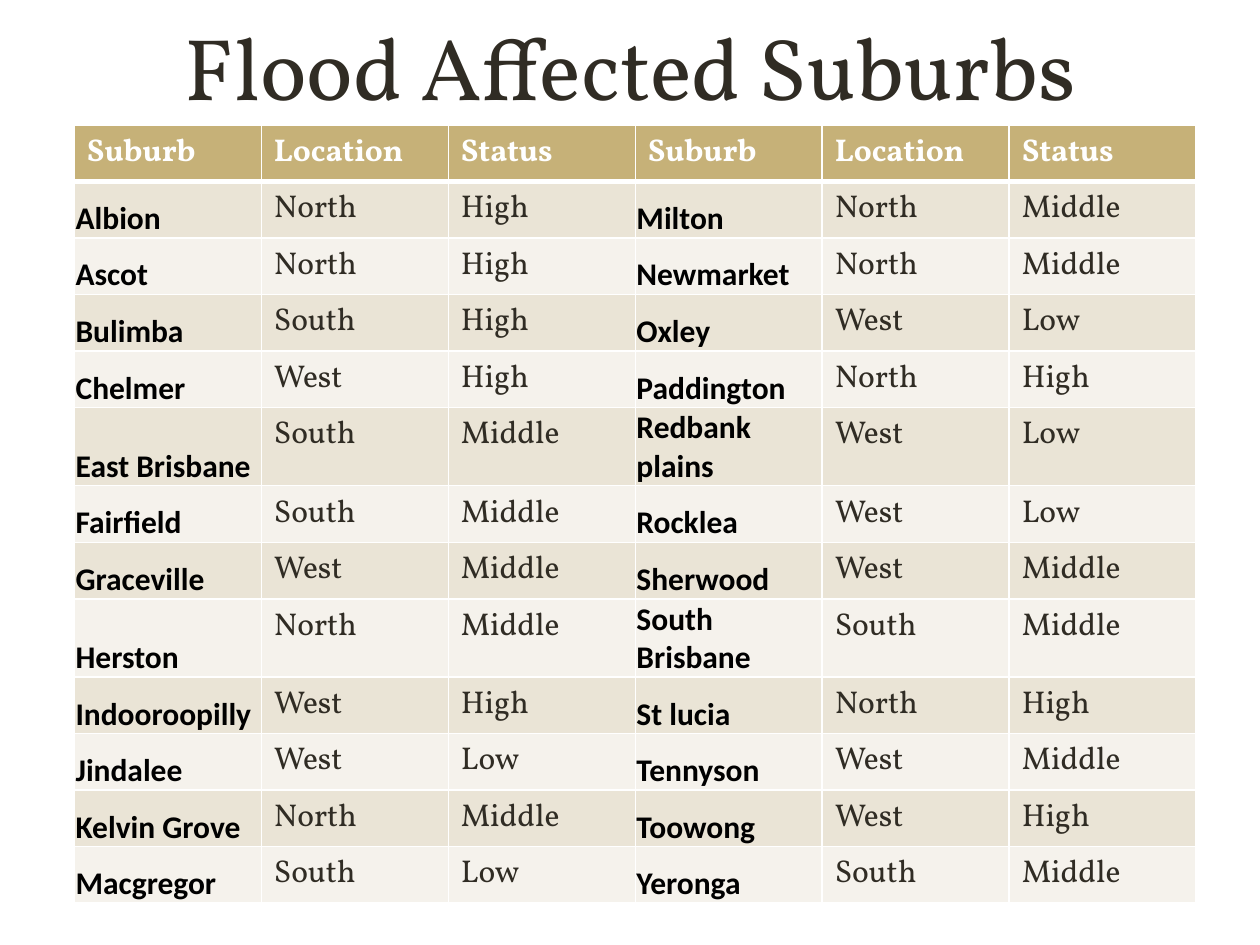
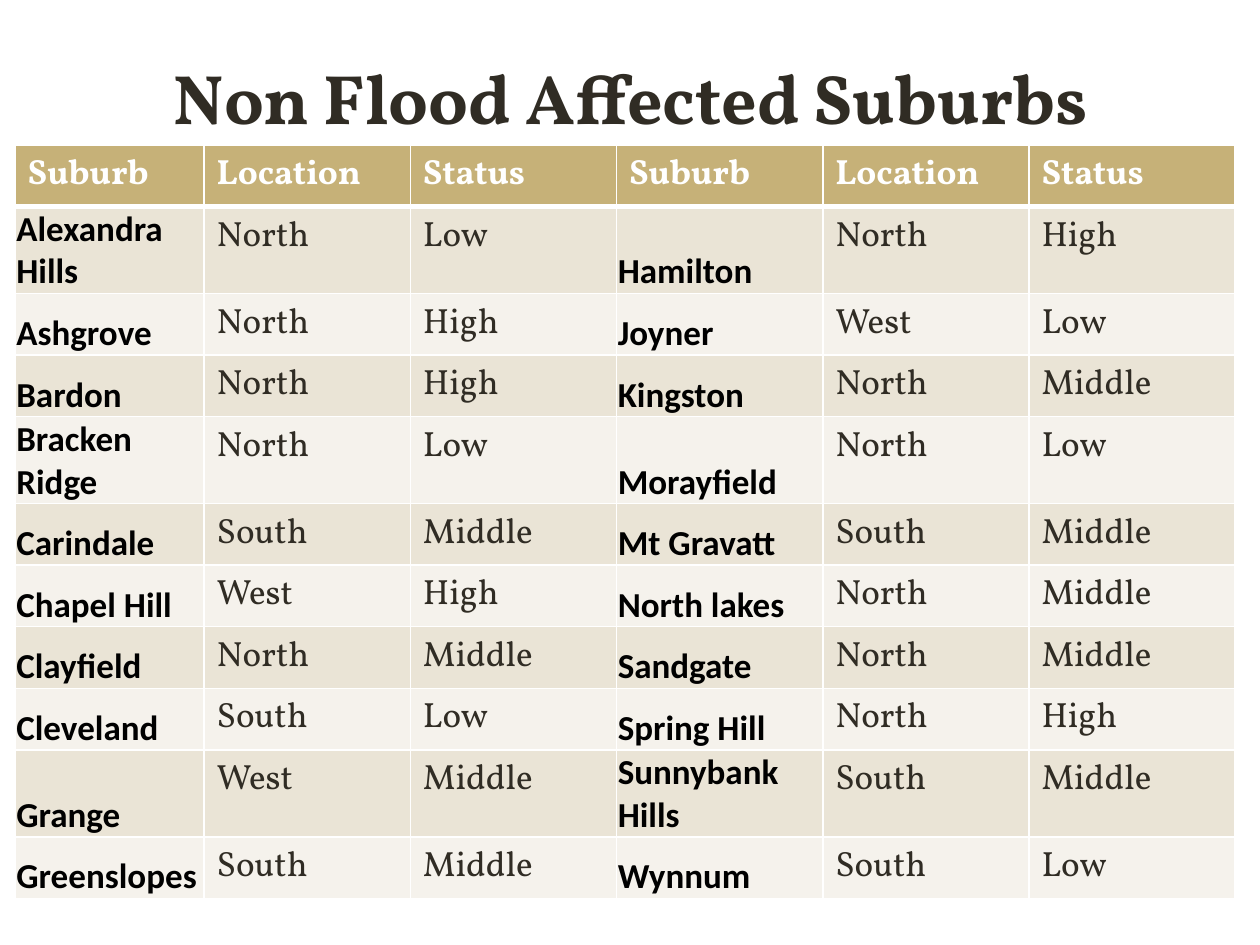
from lxml import etree
from pptx import Presentation
from pptx.dml.color import RGBColor
from pptx.enum.text import MSO_ANCHOR, PP_ALIGN
from pptx.oxml.ns import qn
from pptx.util import Inches, Pt

BOTTOM = MSO_ANCHOR.BOTTOM
CENTER = PP_ALIGN.CENTER
TITLE_ONLY = 5

COLORS = {
    "ink": "302C24",
    "suburb": "000000",
    "white": "FFFFFF",
    "header": "C6B178",
    "odd": "EAE4D6",
    "even": "F5F2EC",
}
BODY_FONT = "Vollkorn"
SUBURB_FONT = "Calibri"
ROW_HEIGHT = 0.41
TITLE_LEFT, TITLE_TOP, TITLE_WIDTH = 0.55, 0.1, 8.91

HEADER = ("Suburb", "Location", "Status") * 2

FLOODED = [
    ("Albion", "North", "High", "Milton", "North", "Middle"),
    ("Ascot", "North", "High", "Newmarket", "North", "Middle"),
    ("Bulimba", "South", "High", "Oxley", "West", "Low"),
    ("Chelmer", "West", "High", "Paddington", "North", "High"),
    ("East Brisbane", "South", "Middle", "Redbank plains", "West", "Low"),
    ("Fairfield", "South", "Middle", "Rocklea", "West", "Low"),
    ("Graceville", "West", "Middle", "Sherwood", "West", "Middle"),
    ("Herston", "North", "Middle", "South Brisbane", "South", "Middle"),
    ("Indooroopilly", "West", "High", "St lucia", "North", "High"),
    ("Jindalee", "West", "Low", "Tennyson", "West", "Middle"),
    ("Kelvin Grove", "North", "Middle", "Toowong", "West", "High"),
    ("Macgregor", "South", "Low", "Yeronga", "South", "Middle"),
]

NOT_FLOODED = [
    ("Alexandra Hills", "North", "Low", "Hamilton", "North", "High"),
    ("Ashgrove", "North", "High", "Joyner", "West", "Low"),
    ("Bardon", "North", "High", "Kingston", "North", "Middle"),
    ("Bracken Ridge", "North", "Low", "Morayfield", "North", "Low"),
    ("Carindale", "South", "Middle", "Mt Gravatt", "South", "Middle"),
    ("Chapel Hill", "West", "High", "North lakes", "North", "Middle"),
    ("Clayfield", "North", "Middle", "Sandgate", "North", "Middle"),
    ("Cleveland", "South", "Low", "Spring Hill", "North", "High"),
    ("Grange", "West", "Middle", "Sunnybank Hills", "South", "Middle"),
    ("Greenslopes", "South", "Middle", "Wynnum", "South", "Low"),
]

PAGES = [
    {"title": "Flood Affected Suburbs", "title_size": 50, "title_bold": False,
     "left": 0.59, "top": 0.99, "columns": [1.484] * 6, "size": 18,
     "suburbs": FLOODED},
    {"title": "Non Flood Affected Suburbs", "title_size": 40, "title_bold": True,
     "left": 0.12, "top": 1.15, "columns": [1.5] + [1.637] * 5, "size": 20,
     "suburbs": NOT_FLOODED},
]


def rgb(name):
    return RGBColor.from_string(COLORS[name])


def format_runs(frame, font_name, size, color, bold):
    for para in frame.paragraphs:
        for span in para.runs:
            span.font.name = font_name
            span.font.size = Pt(size)
            span.font.color.rgb = rgb(color)
            span.font.bold = bold


def set_borders(cell, widths):
    """Draw white cell borders; widths maps L, R, T, B to points."""
    properties = cell._tc.get_or_add_tcPr()
    for side, width in widths.items():
        line = etree.SubElement(properties, qn(f"a:ln{side}"), w=str(Pt(width)))
        fill = etree.SubElement(line, qn("a:solidFill"))
        etree.SubElement(fill, qn("a:srgbClr"), val=COLORS["white"])


def fill_cell(cell, text, row, column, size):
    cell.text_frame.text = text
    set_borders(cell, {"L": 1, "R": 1,
                       "T": 3 if row == 1 else 1,
                       "B": 3 if row == 0 else 1})
    cell.fill.solid()
    if row == 0:
        cell.fill.fore_color.rgb = rgb("header")
        format_runs(cell.text_frame, BODY_FONT, size, "white", True)
        return
    cell.fill.fore_color.rgb = rgb("odd" if row % 2 else "even")
    if HEADER[column] == "Suburb":
        cell.vertical_anchor = BOTTOM
        cell.margin_left = cell.margin_right = cell.margin_top = Inches(0.01)
        cell.margin_bottom = 0
        format_runs(cell.text_frame, SUBURB_FONT, size, "suburb", True)
    else:
        format_runs(cell.text_frame, BODY_FONT, size, "ink", False)


def add_title(slide, page):
    title = slide.shapes.title
    title.left, title.top = Inches(TITLE_LEFT), Inches(TITLE_TOP)
    title.width = Inches(TITLE_WIDTH)
    title.height = Inches(page["top"] - TITLE_TOP)
    frame = title.text_frame
    frame.text = page["title"]
    frame.vertical_anchor = BOTTOM
    frame.paragraphs[0].alignment = CENTER
    format_runs(frame, BODY_FONT, page["title_size"], "ink", page["title_bold"])


def add_suburb_table(slide, page):
    rows = [HEADER] + page["suburbs"]
    table = slide.shapes.add_table(
        len(rows), len(HEADER), Inches(page["left"]), Inches(page["top"]),
        Inches(sum(page["columns"])), Inches(ROW_HEIGHT * len(rows))).table
    for column, width in zip(table.columns, page["columns"]):
        column.width = Inches(width)
    for row, texts in enumerate(rows):
        table.rows[row].height = Inches(ROW_HEIGHT)
        for column, text in enumerate(texts):
            fill_cell(table.cell(row, column), text, row, column, page["size"])


def main():
    deck = Presentation()
    deck.slide_width, deck.slide_height = Inches(10), Inches(7.5)
    for page in PAGES:
        slide = deck.slides.add_slide(deck.slide_layouts[TITLE_ONLY])
        add_title(slide, page)
        add_suburb_table(slide, page)
    deck.save("out.pptx")


if __name__ == "__main__":
    main()
